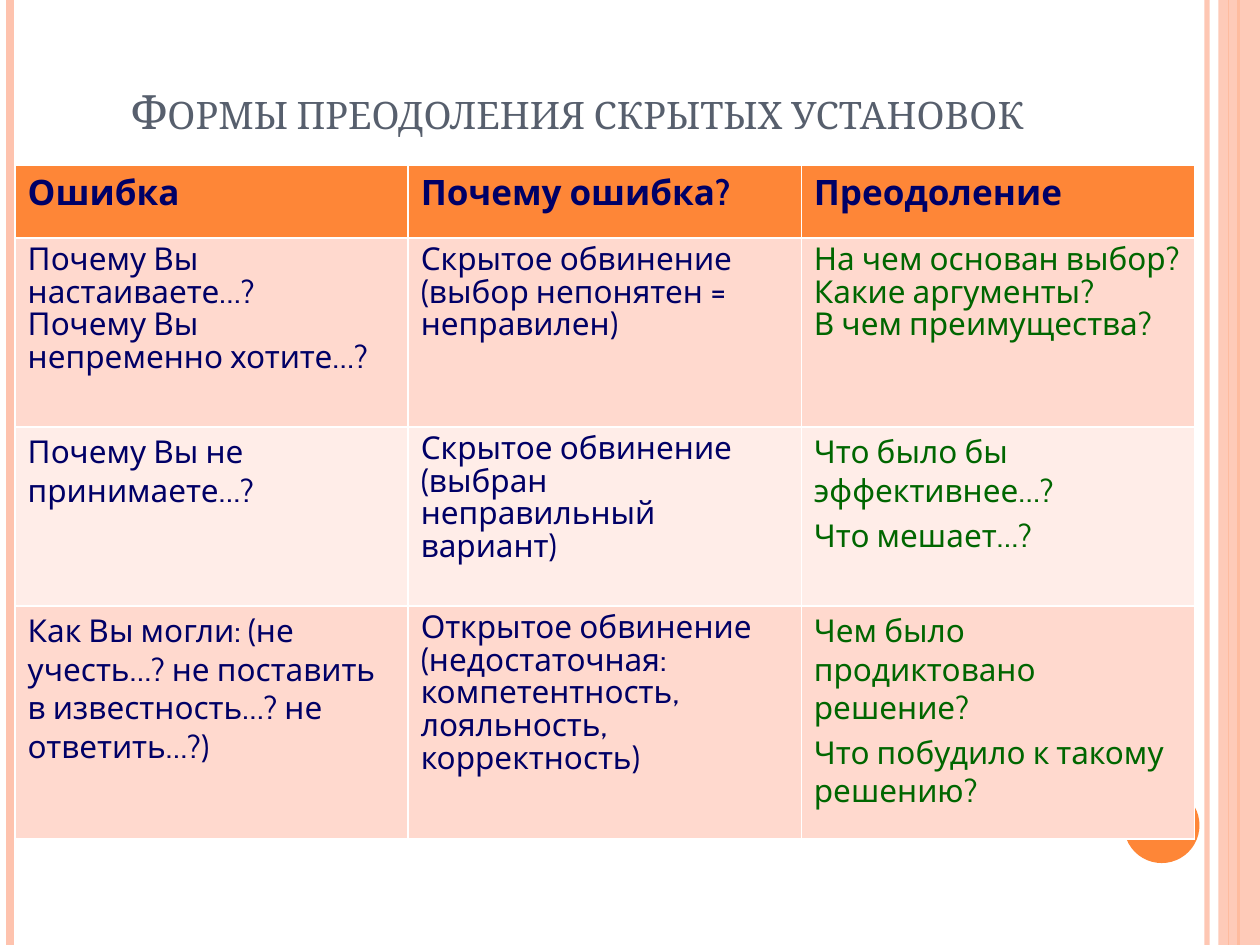
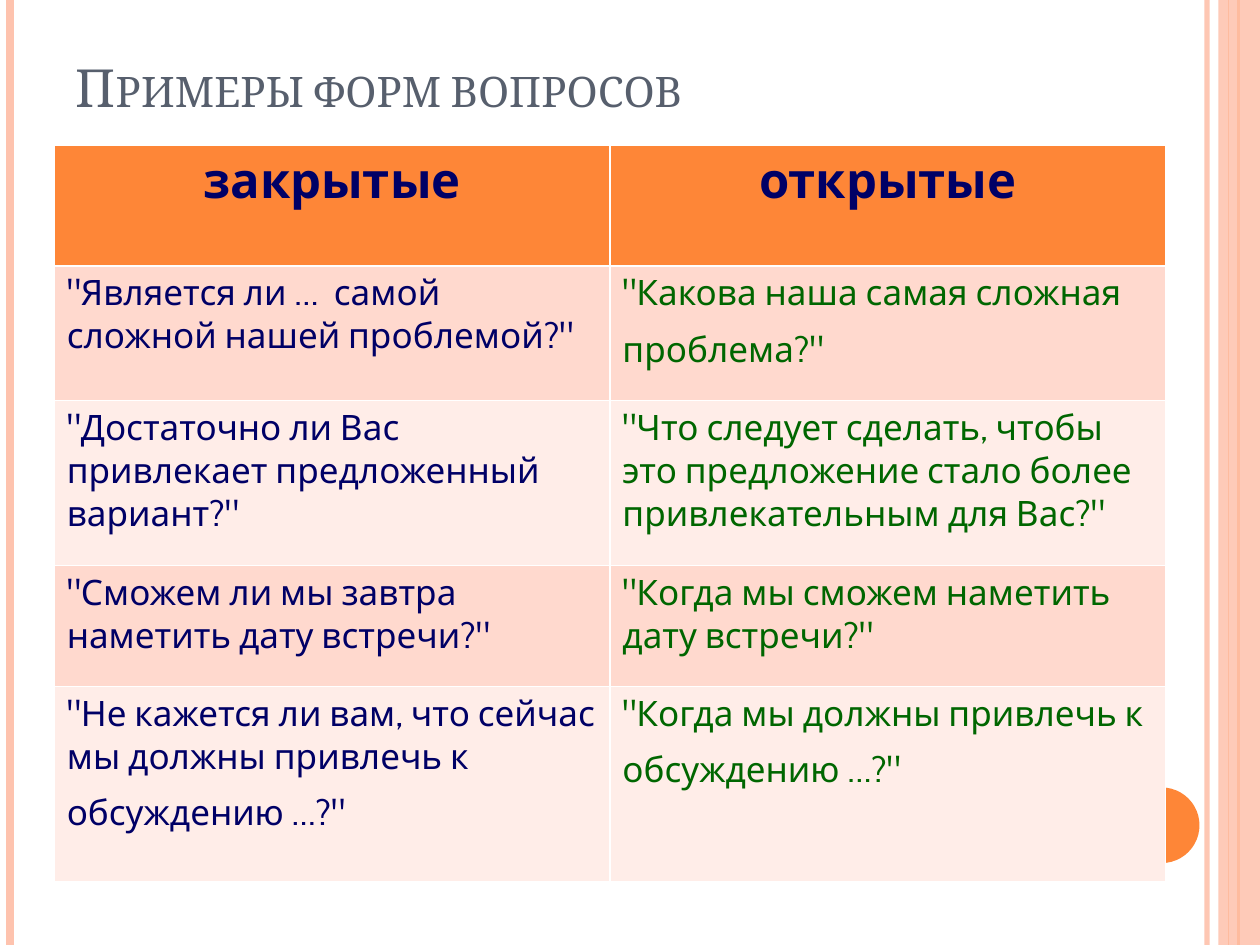
"""Build two slides with tables on hidden assumptions and question forms."""
import pptx
import pptx.dml.color
import pptx.enum.shapes
import pptx.enum.text
import pptx.util
from lxml import etree

PX = 9144
WIDTH, HEIGHT = 1000, 750
ORANGE, PEACH, SLATE = "FE8637", "FEC3AE", "575F6D"
NAVY, GREEN = "000066", "006600"
BANDS = ["FFD9CE", "FFEDE8"]
LEFT = pptx.enum.text.PP_ALIGN.LEFT
CENTER = pptx.enum.text.PP_ALIGN.CENTER
SHAPES = pptx.enum.shapes.MSO_SHAPE
DRAWING = "{http://schemas.openxmlformats.org/drawingml/2006/main}"


def paint(fill, color, opacity=100):
    fill.solid()
    fill.fore_color.rgb = pptx.dml.color.RGBColor.from_string(color)
    if opacity < 100:
        for color_node in fill._xPr.iter(DRAWING + "srgbClr"):
            etree.SubElement(color_node, DRAWING + "alpha", val=str(opacity * 1000))


def style(paragraph, typeface, size, color, bold, alignment):
    paragraph.alignment = alignment
    paragraph.font.name = typeface
    paragraph.font.size = pptx.util.Pt(size)
    paragraph.font.bold = bold
    paint(paragraph.font.fill, color)


stripes = [(958, PEACH, 3, 93), (8, PEACH, 4.5, 100), (983, ORANGE, 1.5, 100), (975, ORANGE, 0.75, 100)]
ornaments = [
    (SHAPES.RECTANGLE, (967, 0, 33, HEIGHT), PEACH, 87),
    (SHAPES.OVAL, (892, 625, 60, 60), ORANGE, 100),
]

pages = [
    {
        "title": "Формы преодоления скрытых установок",
        "title_size": 27, "title_height": 85, "title_alignment": CENTER,
        "left": 12, "top": 131, "column_width": 312,
        "row_heights": [58, 150, 142, 185],
        "header_size": 20, "header_alignment": LEFT, "body_size": 18,
        "tight_cells": [(1, 0), (1, 1), (1, 2), (2, 1), (3, 1)],
        "tall_endings": [],
        "rows": [
            ["Ошибка", "Почему ошибка?", "Преодоление"],
            ["Почему Вы настаиваете…?\nПочему Вы непременно хотите…?",
             "Скрытое обвинение (выбор непонятен = неправилен)",
             "На чем основан выбор?\nКакие аргументы?\nВ чем преимущества?"],
            ["Почему Вы не принимаете…?",
             "Скрытое обвинение (выбран неправильный вариант)",
             "Что было бы эффективнее…?\nЧто мешает…?"],
            ["Как Вы могли: (не учесть…? не поставить в известность…? не ответить…?)",
             "Открытое обвинение (недостаточная: компетентность, лояльность, корректность)",
             "Чем было продиктовано решение?\nЧто побудило к такому решению?"],
        ],
    },
    {
        "title": "Примеры форм вопросов",
        "title_size": 30, "title_height": 69, "title_alignment": LEFT,
        "left": 43, "top": 115, "column_width": 441,
        "row_heights": [96, 107, 131, 96, 155],
        "header_size": 28, "header_alignment": CENTER, "body_size": 20,
        "tight_cells": [],
        "tall_endings": [(1, 1), (4, 0), (4, 1)],
        "rows": [
            ["закрытые", "открытые"],
            ['"Является ли …  самой сложной нашей проблемой?"',
             '"Какова наша самая сложная проблема?"'],
            ['"Достаточно ли Вас привлекает предложенный вариант?"',
             '"Что следует сделать, чтобы это предложение стало более привлекательным для Вас?"'],
            ['"Сможем ли мы завтра наметить дату встречи?"',
             '"Когда мы сможем наметить дату встречи?"'],
            ['"Не кажется ли вам, что сейчас мы должны привлечь к обсуждению …?"',
             '"Когда мы должны привлечь к обсуждению …?"'],
        ],
    },
]

presentation = pptx.Presentation()
presentation.slide_width = WIDTH * PX
presentation.slide_height = HEIGHT * PX

for page in pages:
    slide = presentation.slides.add_slide(presentation.slide_layouts[5])

    for x, color, weight, opacity in stripes:
        stripe = slide.shapes.add_connector(
            pptx.enum.shapes.MSO_CONNECTOR.STRAIGHT, x * PX, 0, x * PX, HEIGHT * PX)
        stripe.line.width = pptx.util.Pt(weight)
        paint(stripe.line.fill, color, opacity)
        etree.SubElement(stripe._element.spPr, DRAWING + "effectLst")
    for preset, box, color, opacity in ornaments:
        ornament = slide.shapes.add_shape(preset, *[length * PX for length in box])
        ornament.shadow.inherit = False
        ornament.line.fill.background()
        paint(ornament.fill, color, opacity)

    title = slide.shapes.title
    title.left, title.top = 50 * PX, 30 * PX
    title.width, title.height = 817 * PX, page["title_height"] * PX
    title.text_frame.text = page["title"]
    title.text_frame.auto_size = pptx.enum.text.MSO_AUTO_SIZE.NONE
    title.text_frame.vertical_anchor = pptx.enum.text.MSO_ANCHOR.BOTTOM
    heading = title.text_frame.paragraphs[0]
    style(heading, "Cambria", page["title_size"], SLATE, False, page["title_alignment"])
    heading.runs[0]._r.get_or_add_rPr().set("cap", "small")

    rows = page["rows"]
    column_count = len(rows[0])
    table = slide.shapes.add_table(
        len(rows), column_count, page["left"] * PX, page["top"] * PX,
        column_count * page["column_width"] * PX, sum(page["row_heights"]) * PX).table
    for column in table.columns:
        column.width = page["column_width"] * PX
    for row, row_height in zip(table.rows, page["row_heights"]):
        row.height = row_height * PX

    for row_index, texts in enumerate(rows):
        is_header = row_index == 0
        size = page["header_size"] if is_header else page["body_size"]
        alignment = page["header_alignment"] if is_header else LEFT
        for column_index, text in enumerate(texts):
            position = (row_index, column_index)
            is_answer = not is_header and column_index == column_count - 1
            cell = table.cell(*position)
            paint(cell.fill, ORANGE if is_header else BANDS[(row_index - 1) % 2])
            cell.text_frame.text = text
            for paragraph in cell.text_frame.paragraphs:
                style(paragraph, "Cabin", size, GREEN if is_answer else NAVY, is_header, alignment)
                if position in page["tight_cells"]:
                    paragraph.line_spacing = 0.85
                else:
                    paragraph.space_before = pptx.util.Pt(size * 0.2)
            if position in page["tall_endings"]:
                ending = paragraph.add_run()
                ending.text = " "
                ending.font.size = pptx.util.Pt(28)

presentation.save("out.pptx")
